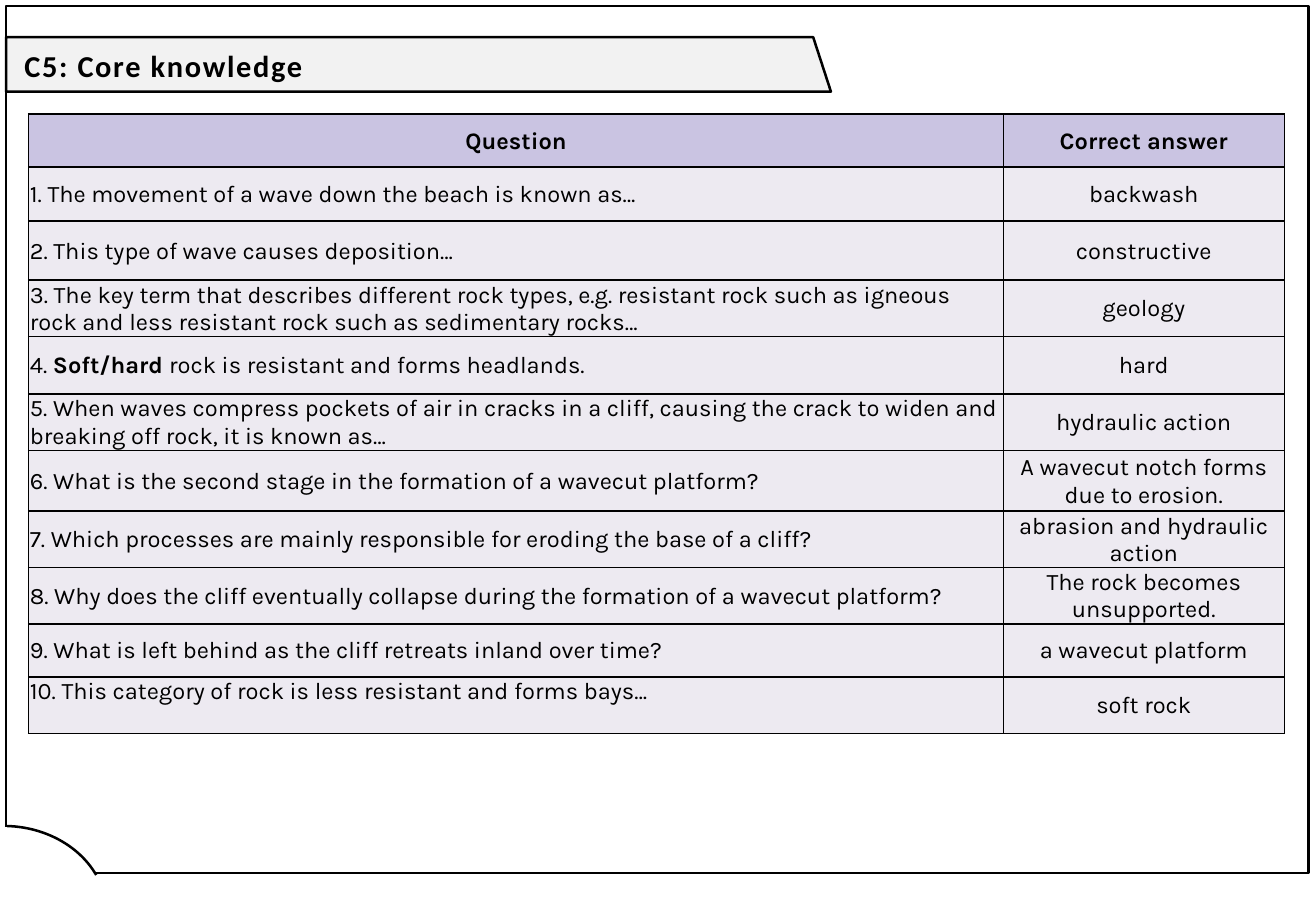
from lxml.etree import SubElement
from pptx import Presentation
from pptx.dml.color import RGBColor
from pptx.enum.shapes import MSO_SHAPE as Preset
from pptx.enum.text import MSO_ANCHOR as Anchor, MSO_AUTO_SIZE as AutoSize, PP_ALIGN as Align
from pptx.oxml.ns import qn
from pptx.util import Pt

TITLE = "C5: Core knowledge"
HEADER = ("Question", "Correct answer", 31.5)
BOLD_PHRASE = "Soft/hard "
QUESTIONS = [
    ("1. The movement of a wave down the beach is known as…", "backwash", 32),
    ("2. This type of wave causes deposition…", "constructive", 35),
    ("3. The key term that describes different rock types, e.g. resistant rock such as igneous "
     "rock and less resistant rock such as sedimentary rocks…", "geology", 33.5),
    ("4. Soft/hard rock is resistant and forms headlands.", "hard", 34),
    ("5. When waves compress pockets of air in cracks in a cliff, causing the crack to widen and "
     "breaking off rock, it is known as…", "hydraulic action", 33.5),
    ("6. What is the second stage in the formation of a wavecut platform?",
     "A wavecut notch forms due to erosion.", 36),
    ("7. Which processes are mainly responsible for eroding the base of a cliff?",
     "abrasion and hydraulic action", 33),
    ("8. Why does the cliff eventually collapse during the formation of a wavecut platform?",
     "The rock becomes unsupported.", 33),
    ("9. What is left behind as the cliff retreats inland over time?", "a wavecut platform", 31.5),
    ("10. This category of rock is less resistant and forms bays…", "soft rock", 33.5),
]

BLACK = RGBColor(0x00, 0x00, 0x00)
WHITE = RGBColor(0xFF, 0xFF, 0xFF)
BANNER_GREY = RGBColor(0xF2, 0xF2, 0xF2)
HEADER_LILAC = RGBColor(0xCA, 0xC4, 0xE2)
ROW_LILAC = RGBColor(0xED, 0xEA, 0xF1)

BANNER_POINTS = [(3.6, 22), (482, 22), (492.5, 54.3), (3.6, 54.3)]
FRAME_BOX = (3.6, 3.6, 772, 514)
CORNER_BOX = (-59, 489.6, 122.4, 104.4)
CORNER_ANGLES = (162.53, 202.27)
PATCH_BOX = (0.7, 490.3, 3.6, 7.2)
TITLE_BOX = (7.2, 15.1, 463, 45.4)
TABLE_LEFT, TABLE_TOP = 17, 67.6
COLUMN_WIDTHS = (577.8, 166.4)


def in_points(values):
    return [Pt(value) for value in values]


def style_shape(shape, fill=None, outlined=True):
    shape.shadow.inherit = False
    if fill is None:
        shape.fill.background()
    else:
        shape.fill.solid()
        shape.fill.fore_color.rgb = fill
    if outlined:
        shape.line.color.rgb = BLACK
        shape.line.width = Pt(1.5)
    else:
        shape.line.fill.background()


def style_font(font, name, size, bold):
    font.name, font.size, font.bold = name, Pt(size), bold
    font.color.rgb = BLACK


def add_decoration(shapes):
    corners = [in_points(point) for point in BANNER_POINTS]
    builder = shapes.build_freeform(*corners[0])
    builder.add_line_segments(corners[1:], close=True)
    banner = builder.convert_to_shape()
    style_shape(banner, BANNER_GREY)
    style_shape(shapes.add_shape(Preset.RECTANGLE, *in_points(FRAME_BOX)))
    corner = shapes.add_shape(Preset.ARC, *in_points(CORNER_BOX))
    for index, angle in enumerate(CORNER_ANGLES):
        corner.adjustments[index] = angle
    style_shape(corner, WHITE)
    patch = shapes.add_shape(Preset.RECTANGLE, *in_points(PATCH_BOX))
    style_shape(patch, WHITE, outlined=False)
    return patch


def write_title(title):
    title.left, title.top, title.width, title.height = in_points(TITLE_BOX)
    frame = title.text_frame
    frame.text = TITLE
    frame.word_wrap = True
    frame.auto_size = AutoSize.NONE
    frame.vertical_anchor = Anchor.MIDDLE
    paragraph = frame.paragraphs[0]
    paragraph.alignment = Align.LEFT
    paragraph.line_spacing = 1.07
    paragraph.space_after = Pt(8)
    style_font(paragraph.font, "Calibri", 18, True)
    for properties in title.element.iter(qn("a:defRPr")):
        properties.set("spc", "100")


def add_borders(cell):
    properties = cell.fill and cell._tc.get_or_add_tcPr()
    for side in ("L", "R", "T", "B"):
        line = SubElement(properties, qn(f"a:ln{side}"), w=str(Pt(1)))
        fill = SubElement(line, qn("a:solidFill"))
        SubElement(fill, qn("a:srgbClr"), val=str(BLACK))


def write_cell(cell, text, is_header, centred):
    add_borders(cell)
    cell.fill.solid()
    cell.fill.fore_color.rgb = HEADER_LILAC if is_header else ROW_LILAC
    cell.margin_left = cell.margin_right = cell.margin_top = Pt(0.72)
    cell.margin_bottom = 0
    cell.vertical_anchor = Anchor.MIDDLE
    paragraph = cell.text_frame.paragraphs[0]
    paragraph.alignment = Align.CENTER if centred else Align.LEFT
    style_font(paragraph.font, "Karla", 14, is_header)
    for part in filter(None, text.partition(BOLD_PHRASE)):
        run = paragraph.add_run()
        run.text = part
        if part == BOLD_PHRASE:
            run.font.bold = True


def add_question_table(shapes):
    rows = [HEADER, *QUESTIONS]
    total_height = sum(height for _, _, height in rows)
    box = in_points((TABLE_LEFT, TABLE_TOP, sum(COLUMN_WIDTHS), total_height))
    table = shapes.add_table(len(rows), len(COLUMN_WIDTHS), *box).table
    table.horz_banding = False
    for column, width in zip(table.columns, COLUMN_WIDTHS):
        column.width = Pt(width)
    for index, (question, answer, height) in enumerate(rows):
        table.rows[index].height = Pt(height)
        is_header = index == 0
        write_cell(table.cell(index, 0), question, is_header, centred=is_header)
        write_cell(table.cell(index, 1), answer, is_header, centred=True)
    table.cell(len(rows) - 1, 0).vertical_anchor = Anchor.TOP


def main():
    """Build the core knowledge question slide."""
    presentation = Presentation()
    presentation.slide_width, presentation.slide_height = Pt(780), Pt(540)
    slide = presentation.slides.add_slide(presentation.slide_layouts[5])
    title = slide.shapes.title
    front_decoration = add_decoration(slide.shapes)
    front_decoration.element.addnext(title.element)
    write_title(title)
    add_question_table(slide.shapes)
    presentation.save("out.pptx")


if __name__ == "__main__":
    main()
